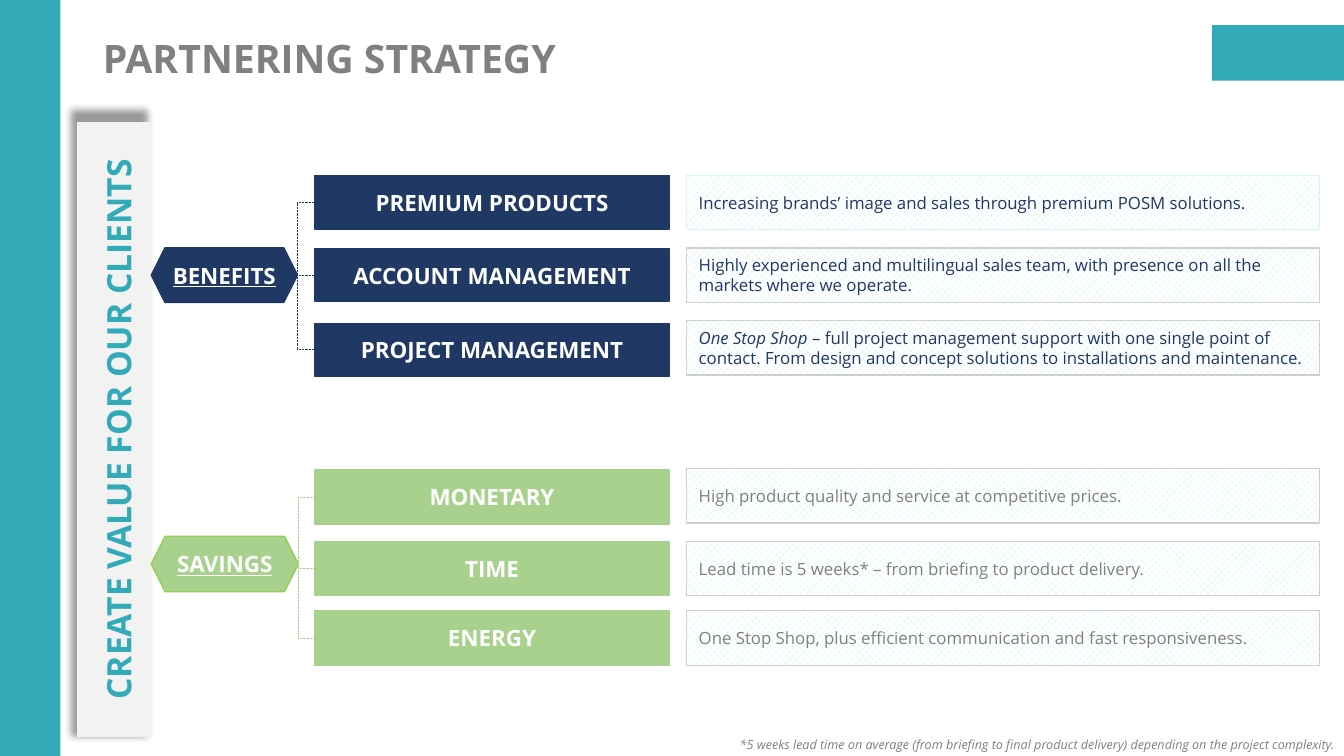
from lxml import etree
from pptx import Presentation
from pptx import util as u
from pptx.dml.color import RGBColor
from pptx.enum import dml, shapes, text
from pptx.oxml import parse_xml
from pptx.oxml.ns import nsdecls, qn

TEAL, NAVY, GREEN, LIME = "33AAB7", "203864", "A9D18E", "92D050"
GRAY, PALE, ICE, RULE, WHITE = "808080", "F2F2F2", "D4F4F6", "D0CECE", "FFFFFF"
RECT, HEX = shapes.MSO_SHAPE.RECTANGLE, shapes.MSO_SHAPE.HEXAGON
LEFT, MID, RIGHT = text.PP_ALIGN.LEFT, text.PP_ALIGN.CENTER, text.PP_ALIGN.RIGHT


def px(n):
    return u.Emu(n * 9144)


def color(code):
    return RGBColor.from_string(code)


def assign(item, values):
    for key, value in values.items():
        setattr(item, key, value)


class Deck:
    face = "Open Sans"

    def __init__(self, wide, high):
        self.file = Presentation()
        assign(self.file, {"slide_width": px(wide), "slide_height": px(high)})
        self.slide = self.file.slides.add_slide(self.file.slide_layouts[5])

    def letter(self, shape, runs, size, ink, align=MID, pad=(0, 0, 0, 0), wrap=True, **font):
        frame = shape.text_frame
        sides = ("left", "top", "right", "bottom")
        assign(frame, {f"margin_{side}": px(n) for side, n in zip(sides, pad)})
        assign(frame, {"auto_size": text.MSO_AUTO_SIZE.NONE, "word_wrap": wrap,
                       "vertical_anchor": text.MSO_ANCHOR.MIDDLE})
        line = frame.paragraphs[0]
        line.alignment = align
        for words, slant in runs:
            run = line.add_run()
            run.text = words
            assign(run.font, {"name": self.face, "size": u.Pt(size), "italic": slant, **font})
            run.font.color.rgb = color(ink)
        return line

    def title(self, words, box):
        shape = self.slide.shapes.title
        assign(shape, dict(zip(("left", "top", "width", "height"), map(px, box))))
        line = self.letter(shape, [(words, False)], 28, GRAY, LEFT, (10, 5, 10, 5), bold=True)
        line.line_spacing = 0.9

    def block(self, box, fill, edge=None, kind=RECT):
        shape = self.slide.shapes.add_shape(kind, *map(px, box))
        shape.shadow.inherit = False
        shape.fill.solid()
        shape.fill.fore_color.rgb = color(fill)
        if edge:
            shape.line.color.rgb = color(edge)
            shape.line.width = u.Pt(1)
        else:
            shape.line.fill.background()
        return shape

    def label(self, box, words, fill, edge, kind=RECT, **font):
        shape = self.block(box, fill, edge, kind)
        self.letter(shape, [(words, False)], 16, WHITE, wrap=False, bold=True, **font)
        return shape

    def panel(self, box, runs, edge, ink):
        shape = self.block(box, WHITE, edge)
        shape.fill.patterned()
        shape.fill.pattern = dml.MSO_PATTERN.PERCENT_50
        shape.fill.fore_color.rgb = color(ICE)
        shape.fill.back_color.rgb = color(WHITE)
        self.letter(shape, runs, 12, ink, LEFT, (12, 0, 14, 0))

    def banner(self, box, words):
        shape = self.block(box, PALE, PALE)
        shape.rotation = 270
        self.letter(shape, [(words, False)], 24, TEAL, pad=(0, 8, 0, 0), bold=True)
        glow = shape._element.spPr.find(qn("a:effectLst"))
        glow.append(parse_xml(
            f'<a:outerShdw {nsdecls("a")} blurRad="63500" sx="102000" sy="102000" '
            'algn="ctr" rotWithShape="0"><a:prstClr val="black">'
            '<a:alpha val="40000"/></a:prstClr></a:outerShdw>'))

    def note(self, box, words):
        shape = self.slide.shapes.add_textbox(*map(px, box))
        self.letter(shape, [(words, True)], 9, GRAY, RIGHT, (0, 5, 10, 5))

    def dots(self, x1, y1, x2, y2, ink, bar=None):
        line = self.slide.shapes.add_connector(
            shapes.MSO_CONNECTOR.STRAIGHT, *map(px, (x1, y1, x2, y2)))
        assign(line.line, {"width": u.Pt(0.5), "dash_style": dml.MSO_LINE.ROUND_DOT})
        line.line.color.rgb = color(ink)
        etree.SubElement(line._element.spPr, qn("a:effectLst"))
        if bar is not None:
            line.end_connect(bar, 1)

    def group(self, name, hexa, fill, edge, ink, rows):
        spine = hexa[0] + hexa[2]
        mids = [top + high // 2 for _, top, high, *_ in rows]
        self.label(hexa, name, fill, edge, HEX, underline=True)
        self.dots(spine, mids[0], spine, mids[-1], fill)
        for mid, (words, top, high, low, rim, runs) in zip(mids, rows):
            bar = self.label((312, top, 352, high), words, fill, fill)
            self.dots(spine, mid, 312, mid, fill, bar)
            self.panel((681, low, 628, 54), runs, rim, ink)


def main():
    deck = Deck(1333, 750)
    deck.block((0, 0, 60, 750), TEAL)
    deck.block((1202, 25, 131, 55), TEAL)
    deck.title("PARTNERING STRATEGY", (92, 40, 1095, 40))
    deck.banner((-191, 390, 608, 72), "CREATE VALUE FOR OUR CLIENTS")
    deck.group("BENEFITS", (150, 246, 145, 54), NAVY, NAVY, NAVY, [
        ("PREMIUM PRODUCTS", 174, 54, 174, ICE, [
            ("Increasing brands’ image and sales through premium POSM solutions.", False)]),
        ("ACCOUNT MANAGEMENT", 247, 52, 246, RULE, [
            ("Highly experienced and multilingual sales team, with presence on all the "
             "markets where we operate.", False)]),
        ("PROJECT MANAGEMENT", 321, 52, 318, RULE, [
            ("One Stop Shop", True),
            (" – full project management support with one single point of contact. "
             "From design and concept solutions to installations and maintenance.", False)]),
    ])
    deck.group("SAVINGS", (150, 532, 146, 55), GREEN, LIME, GRAY, [
        ("MONETARY", 466, 54, 465, RULE, [
            ("High product quality and service at competitive prices.", False)]),
        ("TIME", 537, 54, 537, RULE, [
            ("Lead time is 5 weeks* – from briefing to product delivery.", False)]),
        ("ENERGY", 606, 54, 606, RULE, [
            ("One Stop Shop, plus efficient communication and fast responsiveness.", False)]),
    ])
    deck.note((653, 726, 680, 25),
              "*5 weeks lead time on average (from briefing to final product delivery) "
              "depending on the project complexity.")
    deck.file.save("out.pptx")


if __name__ == "__main__":
    main()
